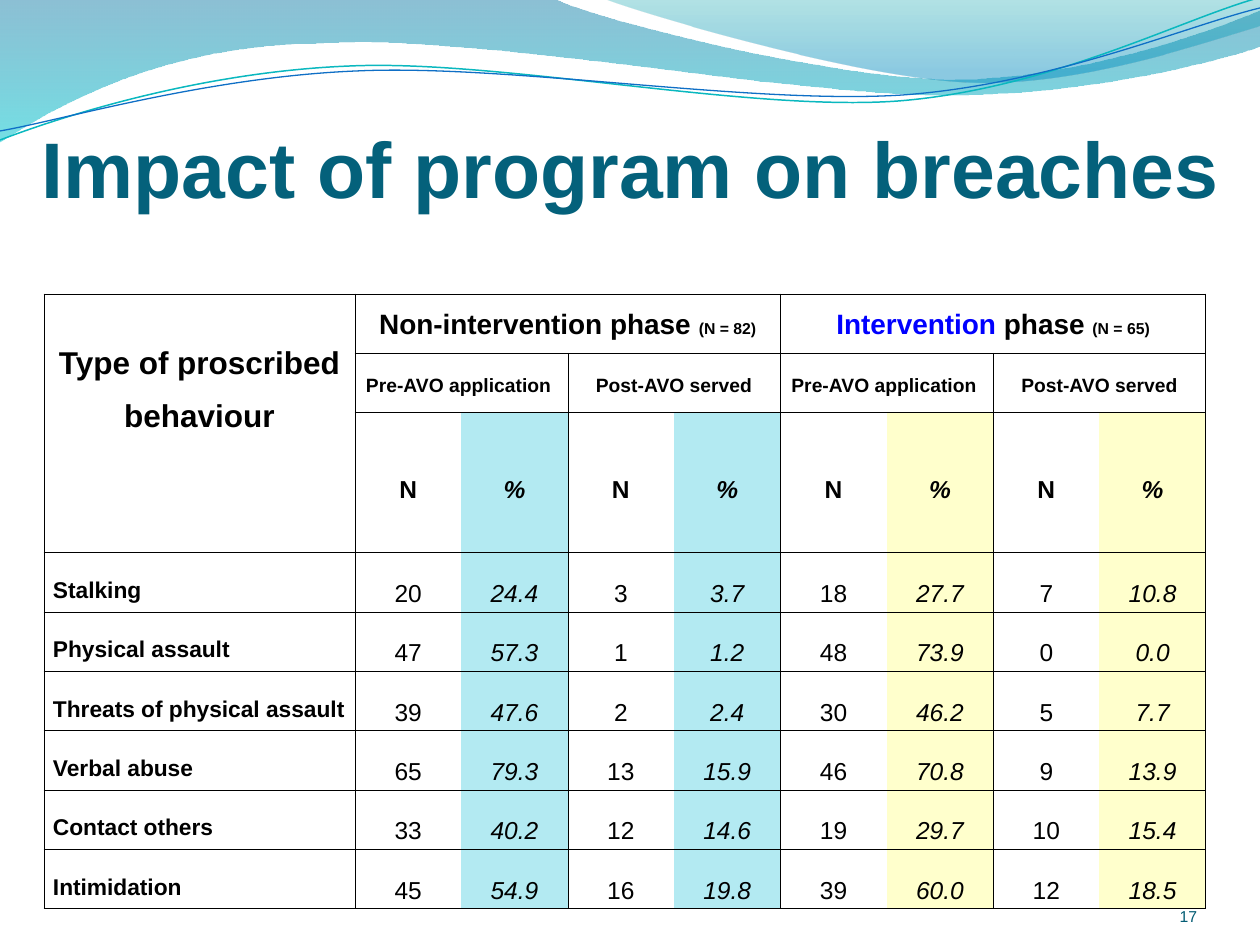
from pptx import Presentation, util as u
from pptx.dml.color import RGBColor
from pptx.enum import text
from pptx.oxml.ns import qn
from lxml import etree

FONT = "Arial"
HUES = {
    "title": "04617B", "number": "045D75", "ink": "000000", "accent": "0000FF",
    "aqua": "B3EAF2", "cream": "FFFFCC", "teal": "0AB8BF", "blue": "0F6FC6",
    "deep": "0074A1", "cyan": "00C6CF", "sea": "00A1A9", "sky": "008BBF",
}
MID, LEFT, RIGHT = text.PP_ALIGN.CENTER, text.PP_ALIGN.LEFT, text.PP_ALIGN.RIGHT

# Waves: start point, then curves (six numbers) or straight lines (two)
BACK = [(0, -1), (554, -1), (600, 21, 837, 79, 955, 79), (1075, 79, 1207, 33, 1260, 11),
        (1261, 46), (1239, 55, 1096, 96, 940, 95), (784, 94, 481, 35, 324, 43),
        (163, 44, 58, 105, -1, 142)]
FRONT = [(604, -1), (641, 14, 859, 78, 969, 82), (1079, 87, 1211, 40, 1260, 26), (1260, 0)]
UPPER = [(0, 140), (60, 117, 199, 72, 349, 66), (498, 59, 747, 112, 898, 101),
         (1050, 89, 1182, 19, 1258, -2)]
LOWER = [(0, 131), (59, 121, 207, 77, 357, 71), (508, 64, 752, 105, 903, 95),
         (1053, 84, 1186, 26, 1260, 8)]

# Table content
PHASES = [[("Non-intervention phase ", 16, "ink"), ("(N = 82)", 9, "ink")],
          [("Intervention ", 16, "accent"), ("phase ", 16, "ink"), ("(N = 65)", 9, "ink")]]
STAGES = ["Pre-AVO application ", "Post-AVO served"]
ROWS = [
    ("Stalking", "20 24.4 3 3.7 18 27.7 7 10.8"),
    ("Physical assault", "47 57.3 1 1.2 48 73.9 0 0.0"),
    ("Threats of physical assault", "39 47.6 2 2.4 30 46.2 5 7.7"),
    ("Verbal abuse", "65 79.3 13 15.9 46 70.8 9 13.9"),
    ("Contact others", "33 40.2 12 14.6 19 29.7 10 15.4"),
    ("Intimidation", "45 54.9 16 19.8 39 60.0 12 18.5"),
]


def px(n):
    return round(n * 914400 / 126)


def rgb(hue):
    return RGBColor.from_string(HUES[hue])


def write(frame, runs, align, bold=False, italic=False, gap=None, after=0):
    """Fill the first paragraph with (words, size, hue) runs."""
    para = frame.paragraphs[0]
    para.alignment = align
    para.space_after = u.Pt(after)
    if gap:
        para.line_spacing = gap
    for words, size, hue in runs:
        run = para.add_run()
        run.text = words
        font = run.font
        font.name, font.size, font.bold, font.italic = FONT, u.Pt(size), bold, italic
        font.color.rgb = rgb(hue)


def outline(slide, box, steps, close):
    """Build a freeform, then join each curve's three points into one Bézier."""
    pts = [(px(box[0] + x), px(box[1] + y))
           for step in steps for x, y in zip(step[::2], step[1::2])]
    form = slide.shapes.build_freeform(*pts[0], scale=1.0)
    form.add_line_segments(pts[1:], close=close)
    shape = form.convert_to_shape()
    shape.shadow.inherit = False
    lines = iter(list(shape.element.spPr.iter(qn("a:lnTo"))))
    for step in steps[1:]:
        line = next(lines)
        if len(step) == 6:
            curve = etree.Element(qn("a:cubicBezTo"))
            line.addprevious(curve)
            for part in (line, next(lines), next(lines)):
                curve.append(part[0])
                part.getparent().remove(part)
    return shape


def waves(slide, box):
    # Translucent bands
    for steps, stops in ((BACK, [(0, "deep", 45), (1, "cyan", 55)]),
                         (FRONT, [(0, "sea", 30), (0.8, "sky", 45)])):
        band = outline(slide, box, steps, True)
        band.line.fill.background()
        band.fill.gradient()
        band.fill.gradient_angle = 270
        for stop, (pos, hue, _) in zip(band.fill.gradient_stops, stops):
            stop.position = pos
            stop.color.rgb = rgb(hue)
        for tone, (_, _, alpha) in zip(band.element.spPr.iter(qn("a:srgbClr")), stops):
            etree.SubElement(tone, qn("a:alpha")).set("val", str(alpha * 1000))
    # Thin lines
    for steps, hue, width in ((UPPER, "teal", 0.85), (LOWER, "blue", 0.75)):
        curve = outline(slide, box, steps, False)
        curve.fill.background()
        curve.line.color.rgb = rgb(hue)
        curve.line.width = u.Pt(width)


def border(cell, side, width):
    line = etree.SubElement(cell._tc.get_or_add_tcPr(), qn("a:ln" + side))
    if not width:
        etree.SubElement(line, qn("a:noFill"))
        return
    line.set("w", str(u.Pt(width)))
    fill = etree.SubElement(line, qn("a:solidFill"))
    etree.SubElement(fill, qn("a:srgbClr")).set("val", HUES["ink"])


def frame(grid, row, col, high=1, wide=1):
    """Merge a block of cells if needed and draw its borders."""
    cross = {0: 0.5, 1: 0.5, 5: 0.5, 9: 0.5, 3: 0.25, 7: 0.25}
    end, edge = row + high, col + wide
    level = {y: 0.5 if y in (0, 1, 2, 9) else 0.25 for y in (row, end)}
    top = grid.cell(row, col)
    if high * wide > 1:
        top.merge(grid.cell(end - 1, edge - 1))
    for r in range(row, end):
        for c in range(col, edge):
            cell = grid.cell(r, c)
            first = (r, c) == (row, col)
            border(cell, "L", c == col and cross.get(col))
            border(cell, "R", (first or c == edge - 1) and cross.get(edge))
            border(cell, "T", r == row and level[row])
            border(cell, "B", (first or r == end - 1) and level[end])
            cell.fill.background()
            cell.margin_left = cell.margin_right = px(9)
            cell.margin_top = cell.margin_bottom = 0
    return top


def results(slide, box):
    x, y, w, h = box
    grid = slide.shapes.add_table(9, 9, px(x), px(y), px(w), px(h)).table
    grid.first_row = grid.horz_banding = False
    grid.columns[0].width = px(311)
    for i in range(1, 9):
        grid.columns[i].width = px((w - 311) / 8)
    for i, row in enumerate(grid.rows):
        row.height = px(140) if i == 2 else px((h - 140) / 8)

    # Headings
    head = frame(grid, 0, 0, high=3)
    head.margin_top = px(34)
    write(head.text_frame, [("Type of proscribed behaviour", 18, "ink")], MID, True, gap=1.5, after=10)
    for i, runs in enumerate(PHASES):
        write(frame(grid, 0, 1 + 4 * i, wide=4).text_frame, runs, MID, True, gap=1.5)
    for i in range(4):
        cell = frame(grid, 1, 1 + 2 * i, wide=2)
        write(cell.text_frame, [(STAGES[i % 2], 11, "ink")], MID, True, gap=2.0, after=10)

    # Unit row and data rows
    for r, (name, nums) in enumerate([("", "N % " * 4)] + ROWS, 2):
        if name:
            write(frame(grid, r, 0).text_frame, [(name, 13, "ink")], LEFT, True, gap=2.0, after=10)
        for c, num in enumerate(nums.split(), 1):
            cell = frame(grid, r, c)
            share = c % 2 == 0
            if share:
                cell.fill.solid()
                cell.fill.fore_color.rgb = rgb("aqua" if c < 5 else "cream")
            if not name:
                cell.vertical_anchor = text.MSO_ANCHOR.MIDDLE
            write(cell.text_frame, [(num, 14, "ink")], MID, not name, share,
                  gap=2.0 if name else 1.5, after=10)


def label(slide, box, words, size, hue, align, bold=False, head=0):
    area = slide.shapes.add_textbox(*map(px, box)).text_frame
    area.word_wrap = True
    area.vertical_anchor = text.MSO_ANCHOR.BOTTOM
    area.margin_left = area.margin_right = area.margin_bottom = 0
    area.margin_top = px(head)
    write(area, [(words, size, hue)], align, bold)


def main():
    deck = Presentation()
    deck.slide_width, deck.slide_height = px(1260), px(945)
    slide = deck.slides.add_slide(deck.slide_layouts[6])
    waves(slide, (0, 0))
    results(slide, (44, 294, 1162, 615))
    label(slide, (1092, 876, 105, 50), "17", 9, "number", RIGHT)
    label(slide, (35, 97, 1191, 117), "Impact of program on breaches", 45, "title", MID, True, 6)
    deck.save("out.pptx")


if __name__ == "__main__":
    main()
